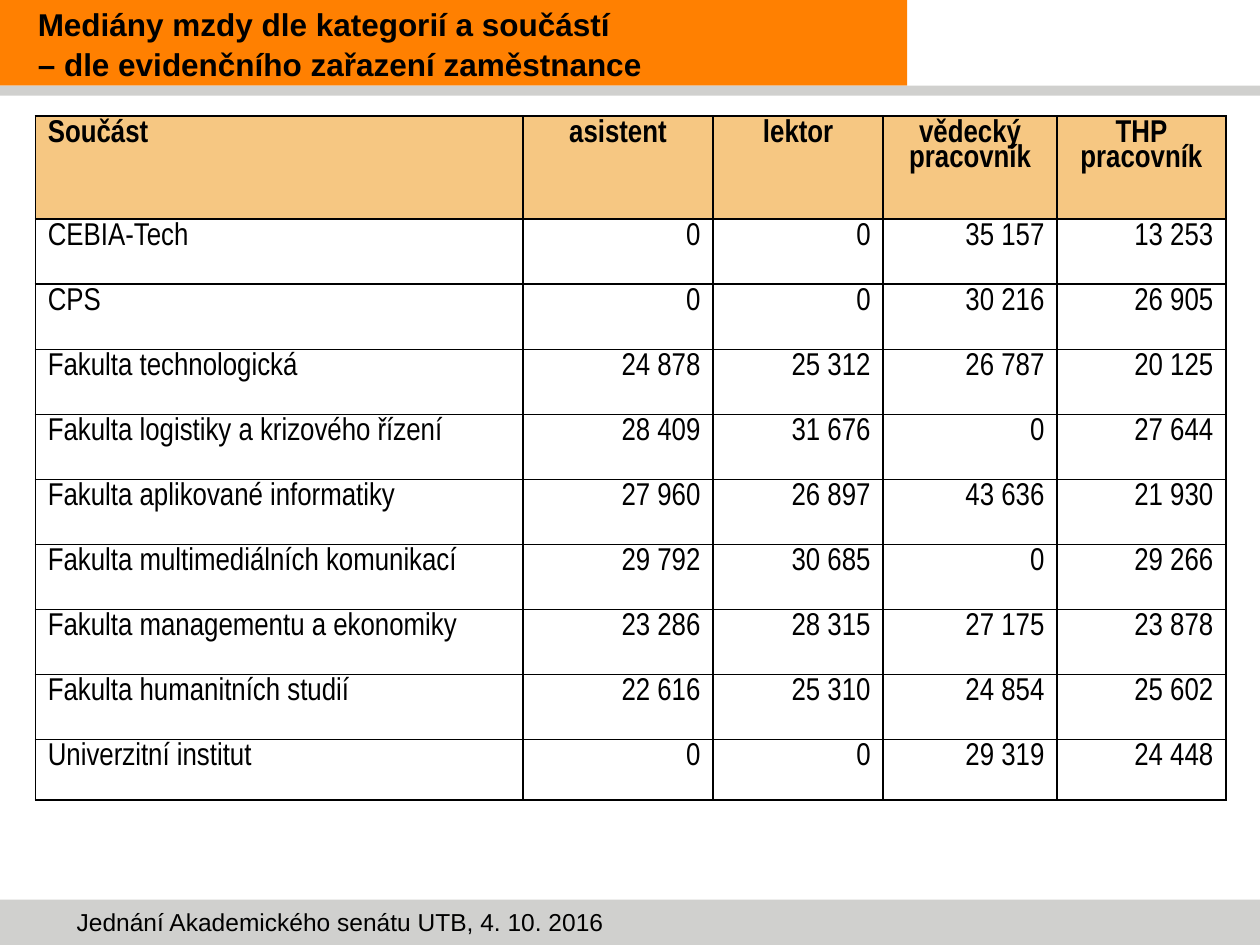
from pptx import Presentation
from pptx.dml.color import RGBColor
from pptx.enum.shapes import MSO_SHAPE
from pptx.enum.text import MSO_ANCHOR, MSO_AUTO_SIZE, PP_ALIGN
from pptx.oxml import parse_xml
from pptx.oxml.ns import nsdecls
from pptx.util import Inches, Pt

ORANGE = RGBColor(0xFF, 0x80, 0x01)
GREY = RGBColor(0xD0, 0xD0, 0xCE)
HEADER_FILL = RGBColor(0xF6, 0xC7, 0x82)
WHITE = RGBColor(0xFF, 0xFF, 0xFF)
BLACK = RGBColor(0, 0, 0)

TITLE = "Mediány mzdy dle kategorií a součástí\v– dle evidenčního zařazení zaměstnance"
FOOTER = "Jednání Akademického senátu UTB, 4. 10. 2016"
ROWS = [
    ("Součást", "asistent", "lektor", "vědecký\npracovník", "THP\npracovník"),
    ("CEBIA-Tech", "0", "0", "35 157", "13 253"),
    ("CPS", "0", "0", "30 216", "26 905"),
    ("Fakulta technologická", "24 878", "25 312", "26 787", "20 125"),
    ("Fakulta logistiky a krizového řízení", "28 409", "31 676", "0", "27 644"),
    ("Fakulta aplikované informatiky", "27 960", "26 897", "43 636", "21 930"),
    ("Fakulta multimediálních komunikací", "29 792", "30 685", "0", "29 266"),
    ("Fakulta managementu a ekonomiky", "23 286", "28 315", "27 175", "23 878"),
    ("Fakulta humanitních studií", "22 616", "25 310", "24 854", "25 602"),
    ("Univerzitní institut", "0", "0", "29 319", "24 448"),
]
BANDS = [
    (0, 0, 7.2, 0.68, ORANGE),
    (0, 7.14, 10, 0.36, GREY),
    (0, 0.68, 10, 0.08, GREY),
]
COLUMN_WIDTHS = [3.87, 1.51, 1.35, 1.38, 1.34]
TABLE_HEIGHT, HEADER_HEIGHT, LAST_HEIGHT = 5.43, 0.82, 0.48
BODY_HEIGHT = (TABLE_HEIGHT - HEADER_HEIGHT - LAST_HEIGHT) / (len(ROWS) - 2)
ROW_HEIGHTS = [HEADER_HEIGHT] + [BODY_HEIGHT] * (len(ROWS) - 2) + [LAST_HEIGHT]


def set_attributes(target, values):
    for name, value in values.items():
        setattr(target, name, value)


def format_text(frame, font_name, size, bold, alignment=PP_ALIGN.LEFT, line_spacing=1.0):
    for paragraph in frame.paragraphs:
        set_attributes(paragraph, {"alignment": alignment, "line_spacing": line_spacing})
        set_attributes(paragraph.font, {"name": font_name, "size": Pt(size), "bold": bold})
        paragraph.font.color.rgb = BLACK


def add_borders(cell):
    properties = cell._tc.get_or_add_tcPr()
    for position, side in enumerate(("lnL", "lnR", "lnT", "lnB")):
        properties.insert(position, parse_xml(
            f'<a:{side} {nsdecls("a")} w="12700"><a:solidFill>'
            f'<a:srgbClr val="{BLACK}"/></a:solidFill></a:{side}>'))


def add_bands(slide):
    for left, top, width, height, color in BANDS:
        band = slide.shapes.add_shape(
            MSO_SHAPE.RECTANGLE, Inches(left), Inches(top), Inches(width), Inches(height))
        band.shadow.inherit = False
        band.fill.solid()
        band.fill.fore_color.rgb = color
        band.line.fill.background()


def add_footer(slide):
    footer = slide.shapes.add_textbox(Inches(0.51), Inches(7.15), Inches(9.21), Inches(0.34))
    set_attributes(footer.text_frame, {
        "text": FOOTER, "word_wrap": True, "auto_size": MSO_AUTO_SIZE.SHAPE_TO_FIT_TEXT})
    format_text(footer.text_frame, "Arial", 14, False)


def place_title(slide):
    title = slide.shapes.title
    set_attributes(title, {
        "left": 0, "top": 0, "width": Inches(7.2), "height": Inches(0.68)})
    set_attributes(title.text_frame, {
        "text": TITLE, "word_wrap": True, "auto_size": MSO_AUTO_SIZE.NONE,
        "vertical_anchor": MSO_ANCHOR.MIDDLE, "margin_left": Inches(0.3)})
    format_text(title.text_frame, "Arial", 18, True, line_spacing=1.05)
    slide.shapes._spTree.append(title._element)


def add_wage_table(slide):
    table = slide.shapes.add_table(
        len(ROWS), len(COLUMN_WIDTHS), Inches(0.28), Inches(0.92),
        Inches(sum(COLUMN_WIDTHS)), Inches(TABLE_HEIGHT)).table
    set_attributes(table, {"first_row": False, "horz_banding": False})
    for column, width in zip(table.columns, COLUMN_WIDTHS):
        column.width = Inches(width)
    for row_index, (row, height, texts) in enumerate(zip(table.rows, ROW_HEIGHTS, ROWS)):
        row.height = Inches(height)
        header = row_index == 0
        for column_index, (cell, text) in enumerate(zip(row.cells, texts)):
            cell.text = text
            cell.fill.solid()
            cell.fill.fore_color.rgb = HEADER_FILL if header else WHITE
            add_borders(cell)
            value_alignment = PP_ALIGN.CENTER if header else PP_ALIGN.RIGHT
            alignment = value_alignment if column_index else PP_ALIGN.LEFT
            format_text(cell.text_frame, "Arial Narrow", 18, header, alignment, 0.85)


def main():
    presentation = Presentation()
    set_attributes(presentation, {"slide_width": Inches(10), "slide_height": Inches(7.5)})
    slide = presentation.slides.add_slide(presentation.slide_layouts[5])
    add_bands(slide)
    add_footer(slide)
    place_title(slide)
    add_wage_table(slide)
    presentation.save("out.pptx")


if __name__ == "__main__":
    main()
